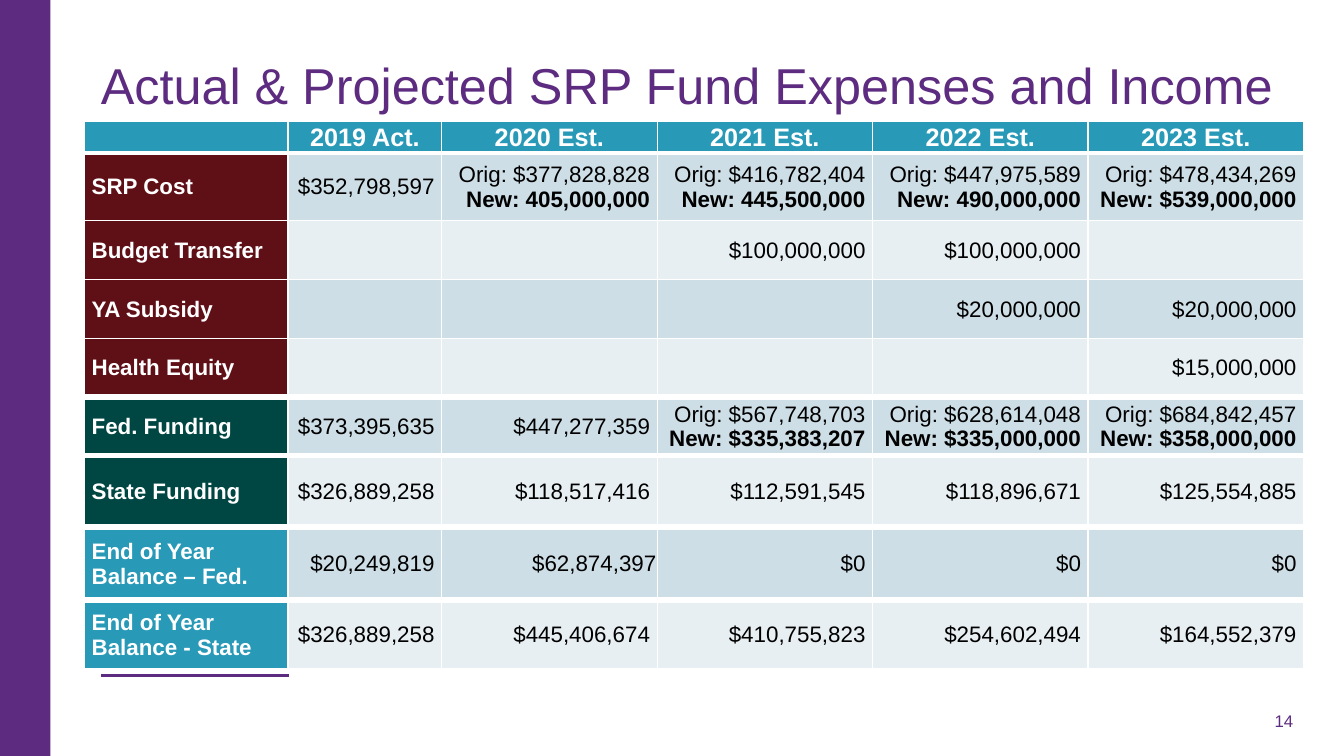
from dataclasses import dataclass

from lxml.etree import SubElement
from pptx import Presentation
from pptx.dml.color import RGBColor
from pptx.enum.shapes import MSO_CONNECTOR, MSO_SHAPE
from pptx.enum.text import MSO_ANCHOR, PP_ALIGN
from pptx.oxml.ns import qn
from pptx.util import Cm, Pt

COLORS = {
    "purple": "5D2C80",
    "teal": "2899B7",
    "maroon": "5F0F16",
    "green": "004642",
    "dark": "CDDEE6",
    "light": "E8EFF3",
    "white": "FFFFFF",
    "black": "000000",
}
FONT = "Arial"
WIDTHS = [5.13, 3.87] + [5.43] * 4
PAD = 0.18
THIN, MEDIUM, THICK = 1, 3, 4.5


@dataclass
class Row:
    label: str
    fill: str
    height: float
    values: list[str]
    rule: float = THIN  # width of the line below, in points


HEADER = Row("", "teal", 0.75,
             ["2019 Act.", "2020 Est.", "2021 Est.", "2022 Est.", "2023 Est."], MEDIUM)
ROWS = [
    Row("SRP Cost", "maroon", 1.71, [
        "$352,798,597",
        "Orig: $377,828,828\nNew: 405,000,000",
        "Orig: $416,782,404\nNew: 445,500,000",
        "Orig: $447,975,589\nNew: 490,000,000",
        "Orig: $478,434,269\nNew: $539,000,000"]),
    Row("Budget Transfer", "maroon", 1.48, ["", "", "$100,000,000", "$100,000,000", ""]),
    Row("YA Subsidy", "maroon", 1.48, ["", "", "", "$20,000,000", "$20,000,000"]),
    Row("Health Equity", "maroon", 1.48, ["", "", "", "", "$15,000,000"], THICK),
    Row("Fed. Funding", "green", 1.48, [
        "$373,395,635",
        "$447,277,359",
        "Orig: $567,748,703\nNew: $335,383,207",
        "Orig: $628,614,048\nNew: $335,000,000",
        "Orig: $684,842,457\nNew: $358,000,000"], THICK),
    Row("State Funding", "green", 1.8, [
        "$326,889,258", "$118,517,416", "$112,591,545", "$118,896,671", "$125,554,885"], THICK),
    Row("End of Year Balance – Fed.", "teal", 1.84,
        ["$20,249,819", "$62,874,397", "$0", "$0", "$0"], THICK),
    Row("End of Year Balance - State", "teal", 1.73, [
        "$326,889,258", "$445,406,674", "$410,755,823", "$254,602,494", "$164,552,379"]),
]


def rgb(name: str) -> RGBColor:
    return RGBColor.from_string(COLORS[name])


def style(font, size: float, color: str, bold: bool | None = None) -> None:
    font.name, font.size, font.bold = FONT, Pt(size), bold
    font.color.rgb = rgb(color)


def pad(box, side: float, top: float = 0, bottom: float = 0) -> None:
    box.margin_left = box.margin_right = Cm(side)
    box.margin_top, box.margin_bottom = Cm(top), Cm(bottom)


def add_rules(cell, above: float, below: float) -> None:
    """Draw the four white cell borders, with widths in points."""
    props = cell._tc.get_or_add_tcPr()
    for side, width in (("L", THIN), ("R", THIN), ("T", above), ("B", below)):
        line = SubElement(props, qn(f"a:ln{side}"), w=str(Pt(width)))
        fill = SubElement(line, qn("a:solidFill"))
        SubElement(fill, qn("a:srgbClr"), val=COLORS["white"])


def fill_cell(cell, text: str, fill: str, size: float, color: str,
              align: PP_ALIGN, bold: bool) -> None:
    """Write the text; a second line stands out in bold."""
    cell.fill.solid()
    cell.fill.fore_color.rgb = rgb(fill)
    cell.vertical_anchor = MSO_ANCHOR.MIDDLE
    pad(cell, PAD, 0.02)
    para = cell.text_frame.paragraphs[0]
    para.alignment = align
    first, *rest = text.split("\n")
    if first:
        para.add_run().text = first
    for line in rest:
        para.add_line_break()
        run = para.add_run()
        run.text = line
        run.font.bold = True
    style(para.font, size, color, bold)


def add_costs(slide) -> None:
    rows = [HEADER, *ROWS]
    frame = slide.shapes.add_table(
        len(rows), len(WIDTHS), Cm(2.13), Cm(3.07),
        Cm(sum(WIDTHS)), Cm(sum(row.height for row in rows)))
    table = frame.table
    table.first_row = table.horz_banding = False
    for col, width in zip(table.columns, WIDTHS):
        col.width = Cm(width)
    above = THIN
    for i, row in enumerate(rows):
        table.rows[i].height = Cm(row.height)
        for j, text in enumerate([row.label, *row.values]):
            cell = table.cell(i, j)
            add_rules(cell, above, row.rule)
            if i == 0:
                fill_cell(cell, text, row.fill, 18, "white", PP_ALIGN.CENTER, True)
            elif j == 0:
                fill_cell(cell, text, row.fill, 16, "white", PP_ALIGN.LEFT, True)
            else:
                band = "dark" if i % 2 else "light"
                fill_cell(cell, text, band, 16, "black", PP_ALIGN.RIGHT, False)
        above = row.rule
    pad(table.cell(7, 2), 0.02, 0.02)


def add_frame(slide) -> None:
    """Draw the side band and the short line under the table."""
    line = slide.shapes.add_connector(
        MSO_CONNECTOR.STRAIGHT, Cm(2.54), Cm(17.02), Cm(7.29), Cm(17.02))
    line.line.color.rgb = rgb("purple")
    line.line.width = Pt(2)
    SubElement(line._element.spPr, qn("a:effectLst"))
    band = slide.shapes.add_shape(MSO_SHAPE.RECTANGLE, 0, 0, Cm(1.27), Cm(19.05))
    band.shadow.inherit = False
    band.fill.solid()
    band.fill.fore_color.rgb = rgb("purple")
    band.line.fill.background()


def set_title(slide) -> None:
    title = slide.shapes.title
    title.left, title.top = Cm(2.54), Cm(1.02)
    title.width, title.height = Cm(30.05), Cm(3.07)
    frame = title.text_frame
    frame.text = "Actual & Projected SRP Fund Expenses and Income"
    frame.vertical_anchor = MSO_ANCHOR.BOTTOM
    frame.word_wrap = True
    pad(frame, 0, 0, 1.18)
    para = frame.paragraphs[0]
    para.alignment = PP_ALIGN.LEFT
    para.line_spacing = 0.9
    style(para.font, 36, "purple")


def add_number(slide) -> None:
    box = slide.shapes.add_textbox(Cm(23.93), Cm(17.65), Cm(8.66), Cm(1.02))
    frame = box.text_frame
    frame.word_wrap = True
    frame.vertical_anchor = MSO_ANCHOR.MIDDLE
    pad(frame, 0)
    frame.text = "14"
    para = frame.paragraphs[0]
    para.alignment = PP_ALIGN.RIGHT
    style(para.font, 12, "purple")


def main() -> None:
    deck = Presentation()
    deck.slide_width, deck.slide_height = Cm(33.87), Cm(19.05)
    slide = deck.slides.add_slide(deck.slide_layouts[5])
    add_frame(slide)
    set_title(slide)
    add_number(slide)
    add_costs(slide)
    deck.save("out.pptx")


if __name__ == "__main__":
    main()
